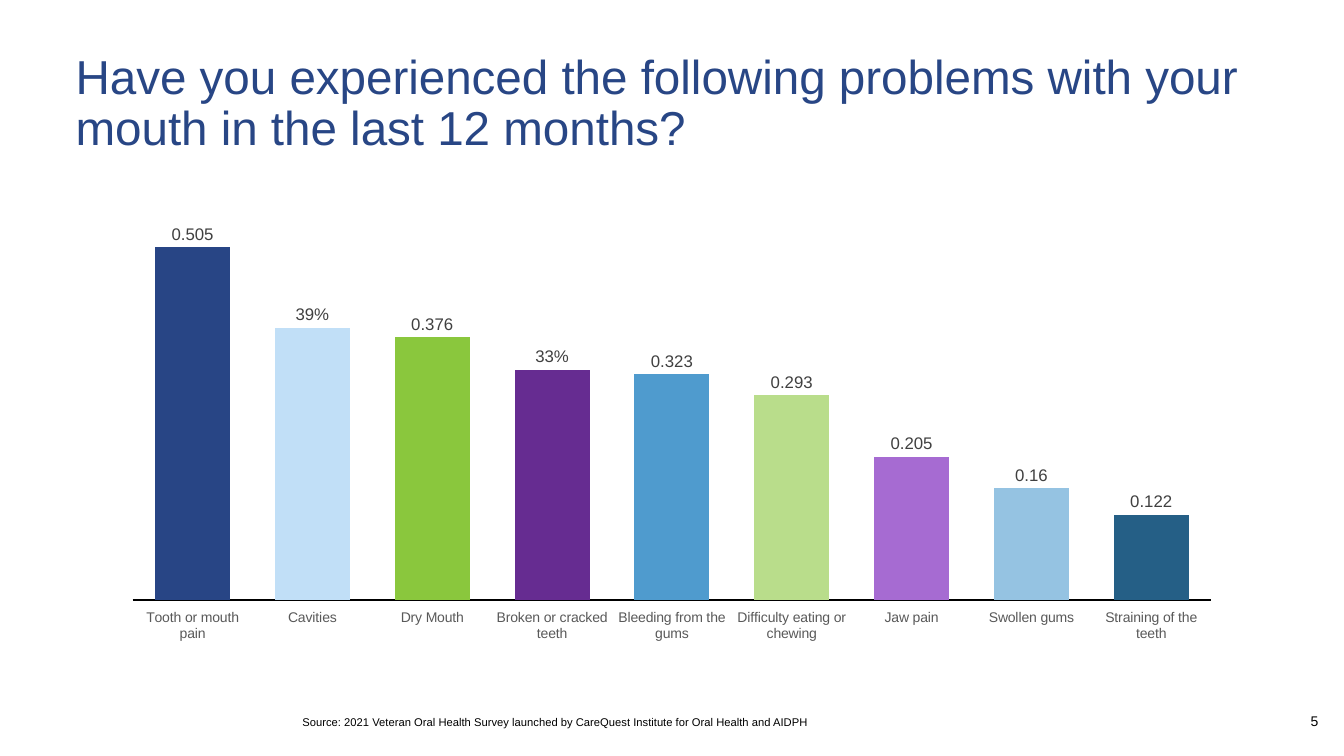
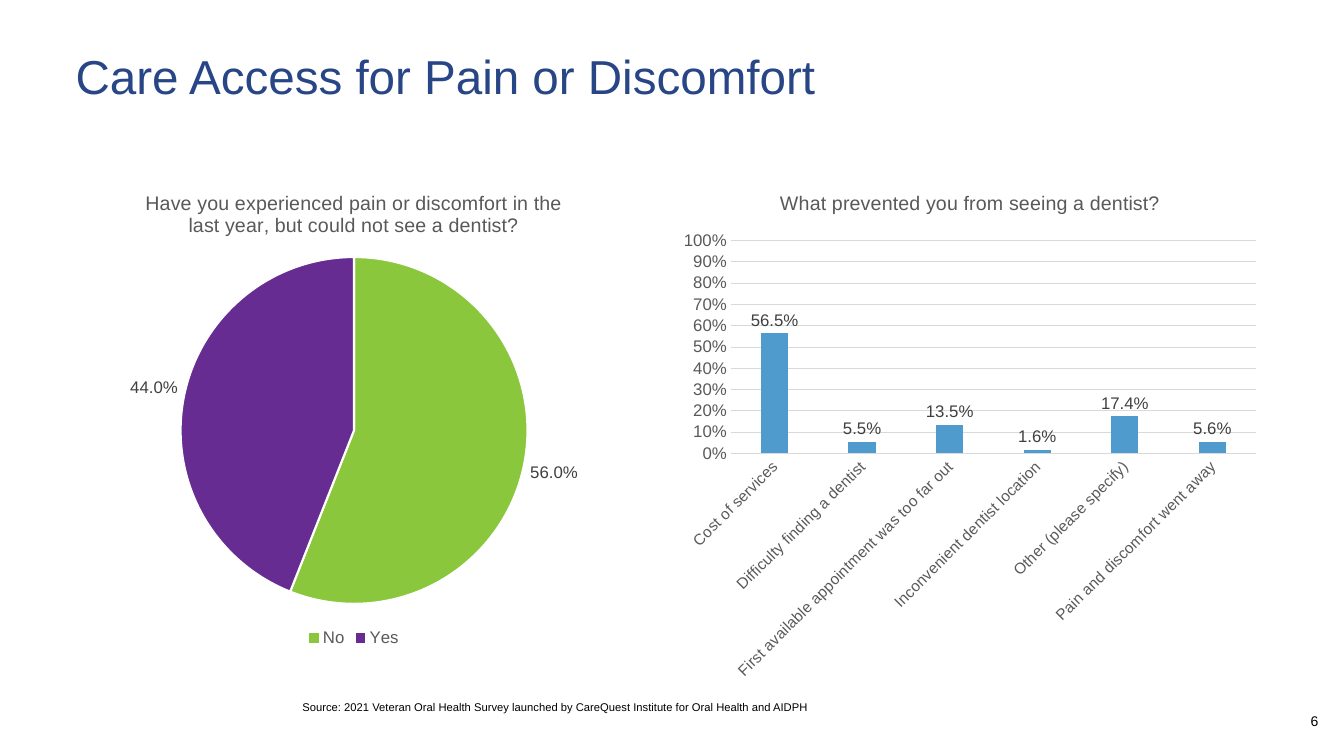
"""Build two survey slides on oral health problems and access to care."""
from dataclasses import dataclass

from lxml import etree
from pptx import Presentation
from pptx import util as u
from pptx.chart import data as chart_data
from pptx.dml import color
from pptx.enum import chart as charts, text
from pptx.oxml import ns

COLORS = {
    "title": "284685", "black": "000000", "white": "FFFFFF",
    "label": "404040", "axis": "595959", "grid": "D9D9D9",
    "navy": "284585", "ice": "C1DFF7", "green": "8AC73D",
    "purple": "662C91", "blue": "4F9BCE", "lime": "B9DD8B",
    "violet": "A66BD2", "sky": "95C3E2", "teal": "255F86",
}
FONT = "Arial"
SLIDE_WIDTH, SLIDE_HEIGHT = u.Inches(13.33), u.Inches(7.5)
COLUMNS, ROWS = 320, 180
SOURCE = ("Source: 2021 Veteran Oral Health Survey launched by "
          "CareQuest Institute for Oral Health and AIDPH")


@dataclass(frozen=True)
class Area:
    """A rectangle in grid columns and rows."""
    column: float
    row: float
    columns: float
    rows: float

    def emu(self) -> tuple[int, int, int, int]:
        """Return left, top, width and height as lengths."""
        across, down = SLIDE_WIDTH / COLUMNS, SLIDE_HEIGHT / ROWS
        return (round(self.column * across), round(self.row * down),
                round(self.columns * across), round(self.rows * down))

    def shares_of(self, outer: "Area") -> tuple[float, float, float, float]:
        """Return this rectangle as shares of an outer one."""
        return ((self.column - outer.column) / outer.columns,
                (self.row - outer.row) / outer.rows,
                self.columns / outer.columns, self.rows / outer.rows)


@dataclass(frozen=True)
class TextStyle:
    """How the text of one kind of box looks."""
    size: float
    color: str
    spacing: float = 1.0
    align: text.PP_ALIGN = text.PP_ALIGN.LEFT
    anchor: text.MSO_ANCHOR = text.MSO_ANCHOR.TOP


@dataclass(frozen=True)
class Bar:
    """One bar of the problem chart."""
    category: str
    value: float
    color: str
    number_format: str = "General"


TITLE = TextStyle(34, "title", 0.9)
NUMBER = TextStyle(10, "black", align=text.PP_ALIGN.RIGHT)
FOOTNOTE = TextStyle(8, "black", 1.1, anchor=text.MSO_ANCHOR.BOTTOM)

PROBLEMS = [
    Bar("Tooth or mouth pain", 0.505, "navy"),
    Bar("Cavities", 0.39, "ice", "0%"),
    Bar("Dry Mouth", 0.376, "green"),
    Bar("Broken or cracked teeth", 0.33, "purple", "0%"),
    Bar("Bleeding from the gums", 0.323, "blue"),
    Bar("Difficulty eating or chewing", 0.293, "lime"),
    Bar("Jaw pain", 0.205, "violet"),
    Bar("Swollen gums", 0.16, "sky"),
    Bar("Straining of the teeth", 0.122, "teal"),
]
ANSWERS = {"No": 0.56, "Yes": 0.44}
REASONS = {
    "Cost of services": 0.565,
    "Difficulty finding a dentist": 0.055,
    "First available appointment was too far out": 0.135,
    "Inconvenient dentist location": 0.016,
    "Other (please specify)": 0.174,
    "Pain and discomfort went away": 0.056,
}


def rgb(name: str) -> color.RGBColor:
    """Look up a colour by name."""
    return color.RGBColor.from_string(COLORS[name])


def style_font(font, size: float, name: str) -> None:
    """Set face, size and colour of a font."""
    font.name, font.size, font.bold = FONT, u.Pt(size), False
    font.color.rgb = rgb(name)


def style_fill(part, name: str) -> None:
    """Give a chart part a solid fill."""
    part.format.fill.solid()
    part.format.fill.fore_color.rgb = rgb(name)


def style_line(part, name: str, width: float) -> None:
    """Give a chart part a solid line."""
    part.format.line.color.rgb = rgb(name)
    part.format.line.width = u.Pt(width)


def add_text(slide, area: Area, content: str, style: TextStyle) -> None:
    """Add a text box without margins."""
    frame = slide.shapes.add_textbox(*area.emu()).text_frame
    frame.word_wrap = True
    frame.margin_left = frame.margin_right = 0
    frame.margin_top = frame.margin_bottom = 0
    frame.vertical_anchor = style.anchor
    paragraph = frame.paragraphs[0]
    paragraph.alignment, paragraph.line_spacing = style.align, style.spacing
    run = paragraph.add_run()
    run.text = content
    style_font(run.font, style.size, style.color)


def add_slide(presentation, title: str, number: int, source_row: float):
    """Add a slide with its title, source line and number."""
    slide = presentation.slides.add_slide(presentation.slide_layouts[6])
    add_text(slide, Area(300, 169.7, 13.9, 4), str(number), NUMBER)
    add_text(slide, Area(18, 12.7, 284, 25.5), title, TITLE)
    add_text(slide, Area(72, source_row, 182.4, 9.4), SOURCE, FOOTNOTE)
    return slide


def set_plot_layout(chart, shares: tuple[float, ...]) -> None:
    """Fix the inner plot area as shares of the chart."""
    plot_area = chart._chartSpace.chart.plotArea
    for layout in plot_area.findall(ns.qn("c:layout")):
        plot_area.remove(layout)
    layout = etree.Element(ns.qn("c:layout"))
    manual = etree.SubElement(layout, ns.qn("c:manualLayout"))
    settings = [("layoutTarget", "inner"), ("xMode", "edge"), ("yMode", "edge")]
    settings += zip("xywh", map(str, shares))
    for tag, value in settings:
        etree.SubElement(manual, ns.qn(f"c:{tag}")).set("val", value)
    plot_area.insert(0, layout)


def add_chart(slide, kind, area: Area, plot_area: Area, categories, columns,
              title: str = ""):
    """Add a chart with an optional title and no legend."""
    data = chart_data.CategoryChartData()
    data.categories = list(categories)
    for index, values in enumerate(columns, 1):
        data.add_series(f"Series {index}", values)
    chart = slide.shapes.add_chart(kind, *area.emu(), data).chart
    chart.replace_data(data)
    for series, values in zip(chart.plots[0].series, columns):
        if not values:
            for tag in ("c:cat", "c:val"):
                for child in series._element.findall(ns.qn(tag)):
                    series._element.remove(child)
    style_font(chart.font, 12, "black")
    chart.has_legend = False
    chart.has_title = bool(title)
    if title:
        run = chart.chart_title.text_frame.paragraphs[0].add_run()
        run.text = title
        style_font(run.font, 14, "axis")
        chart.chart_title.include_in_layout = False
    set_plot_layout(chart, plot_area.shares_of(area))
    return chart


def label_series(series, number_format: str) -> None:
    """Show the values outside the ends."""
    labels = series.data_labels
    labels.show_value = True
    labels.number_format, labels.number_format_is_linked = number_format, False
    labels.position = charts.XL_LABEL_POSITION.OUTSIDE_END
    style_font(labels.font, 12, "label")


def style_columns(chart, gap: int, overlap: int, maximum: float,
                  category_size: float, base: tuple[str, float],
                  grid: str) -> None:
    """Style bars and both axes of a column chart."""
    plot = chart.plots[0]
    plot.vary_by_categories = False
    plot.gap_width, plot.overlap = gap, overlap
    axes = chart.category_axis, chart.value_axis
    for axis, size in zip(axes, (category_size, 12)):
        axis.major_tick_mark = axis.minor_tick_mark = charts.XL_TICK_MARK.NONE
        style_font(axis.tick_labels.font, size, "axis")
    style_line(chart.category_axis, *base)
    value_axis = chart.value_axis
    value_axis.minimum_scale, value_axis.maximum_scale = 0, maximum
    value_axis.major_unit = 0.1
    value_axis.format.line.fill.background()
    value_axis.has_major_gridlines = True
    style_line(value_axis.major_gridlines, grid, 0.75)
    value_axis.tick_labels.number_format = "0%"
    value_axis.tick_labels.number_format_is_linked = False


def add_problem_chart(slide) -> None:
    """Add the chart of problems, one series for each bar."""
    columns = [
        [bar.value if place == index else None for place in range(len(PROBLEMS))]
        for index, bar in enumerate(PROBLEMS)
    ]
    chart = add_chart(slide, charts.XL_CHART_TYPE.COLUMN_CLUSTERED,
                      Area(26.4, 40.8, 267.4, 114.2),
                      Area(31.6, 43.1, 256.8, 99.8),
                      [bar.category for bar in PROBLEMS], columns)
    style_columns(chart, 60, 100, 0.6, 10, ("black", 1.5), "white")
    chart.category_axis.tick_label_position = charts.XL_TICK_LABEL_POSITION.LOW
    chart.value_axis.tick_label_position = charts.XL_TICK_LABEL_POSITION.NONE
    for bar, column in zip(PROBLEMS, chart.plots[0].series):
        style_fill(column, bar.color)
        label_series(column, bar.number_format)


def add_answer_chart(slide) -> None:
    """Add the pie of answers, held in the third series."""
    chart = add_chart(slide, charts.XL_CHART_TYPE.PIE,
                      Area(18, 40.8, 132.5, 114.2), Area(43, 61.2, 82.6, 82.6),
                      ANSWERS, [[], [], list(ANSWERS.values())],
                      "Have you experienced pain or discomfort in the last year, "
                      "but could not see a dentist?")
    chart.has_legend = True
    chart.legend.position = charts.XL_LEGEND_POSITION.BOTTOM
    chart.legend.include_in_layout = False
    style_font(chart.legend.font, 12, "axis")
    pie = chart.plots[0].series[2]
    for index, name in enumerate(("green", "purple")):
        style_fill(pie.points[index], name)
        style_line(pie.points[index], "white", 1.5)
    label_series(pie, "0.0%")


def add_reason_chart(slide) -> None:
    """Add the chart of reasons with slanted labels."""
    chart = add_chart(slide, charts.XL_CHART_TYPE.COLUMN_CLUSTERED,
                      Area(160, 40.8, 142, 123.4),
                      Area(174, 57.3, 125.1, 50.7),
                      REASONS, [[], [], list(REASONS.values())],
                      "What prevented you from seeing a dentist?")
    style_columns(chart, 219, -27, 1, 11, ("grid", 0.75), "grid")
    label_body = chart.category_axis._element.find(
        f"{ns.qn('c:txPr')}/{ns.qn('a:bodyPr')}")
    label_body.set("rot", str(-45 * 60000))
    label_body.set("vert", "horz")
    for column, name in zip(chart.plots[0].series, ("green", "purple", "blue")):
        style_fill(column, name)
        label_series(column, "0.0%")


def main() -> None:
    """Build and save the presentation."""
    presentation = Presentation()
    presentation.slide_width = SLIDE_WIDTH
    presentation.slide_height = SLIDE_HEIGHT
    problems = add_slide(
        presentation, "Have you experienced the following problems with your "
        "mouth in the last 12 months?", 5, 164.2)
    add_problem_chart(problems)
    access = add_slide(
        presentation, "Care Access for Pain or Discomfort", 6, 160.6)
    add_answer_chart(access)
    add_reason_chart(access)
    presentation.save("out.pptx")


if __name__ == "__main__":
    main()
